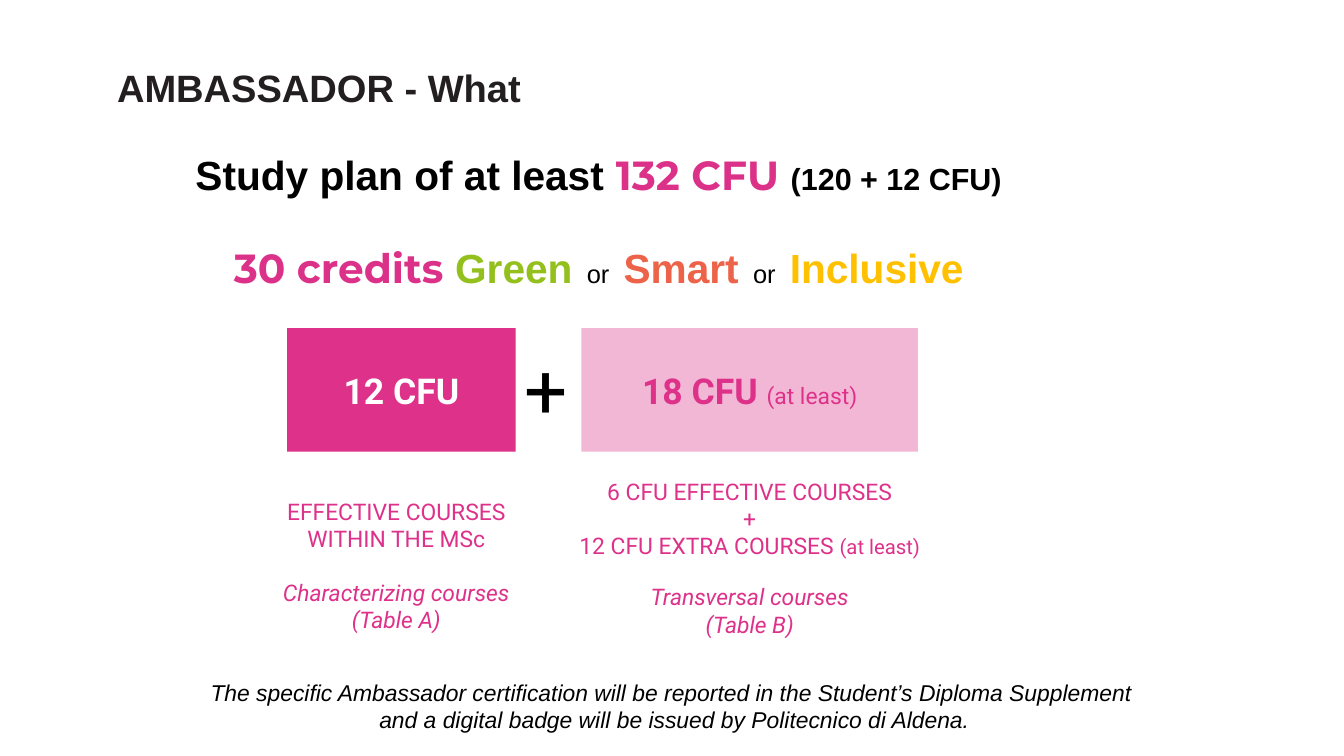
from pptx import Presentation
from pptx.dml.color import RGBColor
from pptx.enum.shapes import MSO_SHAPE
from pptx.enum.text import MSO_ANCHOR, MSO_AUTO_SIZE, PP_ALIGN
from pptx.util import Inches, Pt

MAGENTA = "DD318A"
BRIGHT_MAGENTA = "DC3189"
PALE_PINK = "F3B7D6"
BLACK = "000000"
SEPARATOR = ("  or  ", {"size": 20, "color": BLACK, "bold": False})


def color_of(hex_value):
    return RGBColor.from_string(hex_value)


def set_font(font, size=None, name=None, color=None, bold=None, italic=None):
    if size:
        font.size = Pt(size)
    if name:
        font.name = name
    if color:
        font.color.rgb = color_of(color)
    if bold is not None:
        font.bold = bold
    if italic is not None:
        font.italic = italic


def place(shape, left, top, width, height):
    shape.left, shape.top = Inches(left), Inches(top)
    shape.width, shape.height = Inches(width), Inches(height)


def set_frame(frame, margins=(0, 0, 0, 0), anchor=MSO_ANCHOR.TOP):
    frame.word_wrap = True
    frame.auto_size = MSO_AUTO_SIZE.NONE
    frame.vertical_anchor = anchor
    frame.margin_left, frame.margin_top, frame.margin_right, frame.margin_bottom = map(Inches, margins)


def fill_paragraph(paragraph, runs, align=PP_ALIGN.CENTER, space_before=0, **font):
    paragraph.alignment = align
    paragraph.space_before = Pt(space_before)
    set_font(paragraph.font, **font)
    for text, run_font in runs:
        run = paragraph.add_run()
        run.text = text
        set_font(run.font, **run_font)


def fill_frame(frame, lines, align=PP_ALIGN.CENTER, **font):
    for index, (runs, options) in enumerate(lines):
        paragraph = frame.add_paragraph() if index else frame.paragraphs[0]
        fill_paragraph(paragraph, runs, align, **{**font, **options})


def plain(text, **options):
    return [(text, {})], options


def add_text(slide, box, lines, margins=(0.1, 0.05, 0.1, 0.05),
             anchor=MSO_ANCHOR.TOP, align=PP_ALIGN.CENTER, **font):
    frame = slide.shapes.add_textbox(*map(Inches, box)).text_frame
    set_frame(frame, margins, anchor)
    fill_frame(frame, lines, align, **font)


def add_credit_box(slide, left, width, fill, runs, **font):
    shape = slide.shapes.add_shape(
        MSO_SHAPE.RECTANGLE, Inches(left), Inches(3.59), Inches(width), Inches(1.35))
    shape.shadow.inherit = False
    shape.fill.solid()
    shape.fill.fore_color.rgb = color_of(fill)
    shape.line.fill.background()
    set_frame(shape.text_frame, anchor=MSO_ANCHOR.MIDDLE)
    fill_frame(shape.text_frame, [(runs, {})], name="Roboto", size=28, bold=True, **font)


def add_courses(slide, box, lines, top_margin=0):
    add_text(slide, box, lines, (0, top_margin, 0, 0), MSO_ANCHOR.MIDDLE,
             name="Roboto", size=18, color=MAGENTA)


def add_title(slide):
    title = slide.shapes.title
    place(title, 1.27, 0.69, 12.85, 0.52)
    set_frame(title.text_frame, (0.01, 0.01, 0, 0))
    fill_frame(title.text_frame, [plain("AMBASSADOR - What")], PP_ALIGN.LEFT,
               name="Arial", size=30, color="231F20", bold=True)


def add_headlines(slide):
    study_plan = [
        ("Study plan of at least ", {"name": "Arial", "color": BLACK}),
        ("132 CFU ", {"name": "Montserrat", "color": BRIGHT_MAGENTA}),
        ("(120 + 12 CFU)", {"name": "Arial", "color": BLACK, "size": 24}),
    ]
    credits = [
        ("30 credits ", {"name": "Montserrat", "color": BRIGHT_MAGENTA}),
        ("Green", {"color": "94C01D"}),
        SEPARATOR,
        ("Smart", {"color": "EC6349"}),
        SEPARATOR,
        ("Inclusive", {"color": "FFC000"}),
    ]
    add_text(slide, (2.04, 1.59, 10.8, 1.21), [(study_plan, {})],
             align=PP_ALIGN.LEFT, size=32, bold=True)
    add_text(slide, (0.44, 2.61, 12.22, 0.64), [(credits, {})],
             name="Arial", size=32, bold=True)


def add_credit_split(slide):
    add_credit_box(slide, 3.14, 2.5, MAGENTA, [("12 CFU", {})], color="FFFFFF")
    add_text(slide, (5.73, 3.75, 0.51, 1.01), [plain("+")], (0.01, 0, 0, 0),
             align=PP_ALIGN.LEFT, name="Roboto", size=60, color=BLACK)
    add_credit_box(slide, 6.36, 3.68, PALE_PINK,
                   [("18 CFU ", {}), ("(at least)", {"size": 18, "bold": False})],
                   color=MAGENTA)
    add_courses(slide, (3.02, 4.6, 2.63, 2.87), [
        plain("EFFECTIVE COURSES WITHIN THE MSc"),
        plain("Characterizing courses", italic=True, space_before=21),
        plain("(Table A)", italic=True),
    ], top_margin=0.3)
    add_courses(slide, (6.08, 4.66, 4.24, 2.88), [
        plain("6 CFU EFFECTIVE COURSES"),
        plain("+"),
        ([("12 CFU EXTRA COURSES ", {}), ("(at least)", {"size": 16})], {}),
        plain("Transversal courses", italic=True, space_before=18.6),
        plain("(Table B)", italic=True),
    ])


def add_closing_note(slide):
    add_text(slide, (0.37, 7.37, 14.01, 0.71), [
        plain("The specific Ambassador certification will be reported in the "
              "Student’s Diploma Supplement "),
        plain("and a digital badge will be issued by Politecnico di Aldena."),
    ], name="Arial", size=18, color=BLACK, italic=True)


def main():
    presentation = Presentation()
    presentation.slide_width = Inches(14.7)
    presentation.slide_height = Inches(8.27)
    slide = presentation.slides.add_slide(presentation.slide_layouts[5])
    add_title(slide)
    add_headlines(slide)
    add_credit_split(slide)
    add_closing_note(slide)
    presentation.save("out.pptx")


if __name__ == "__main__":
    main()
